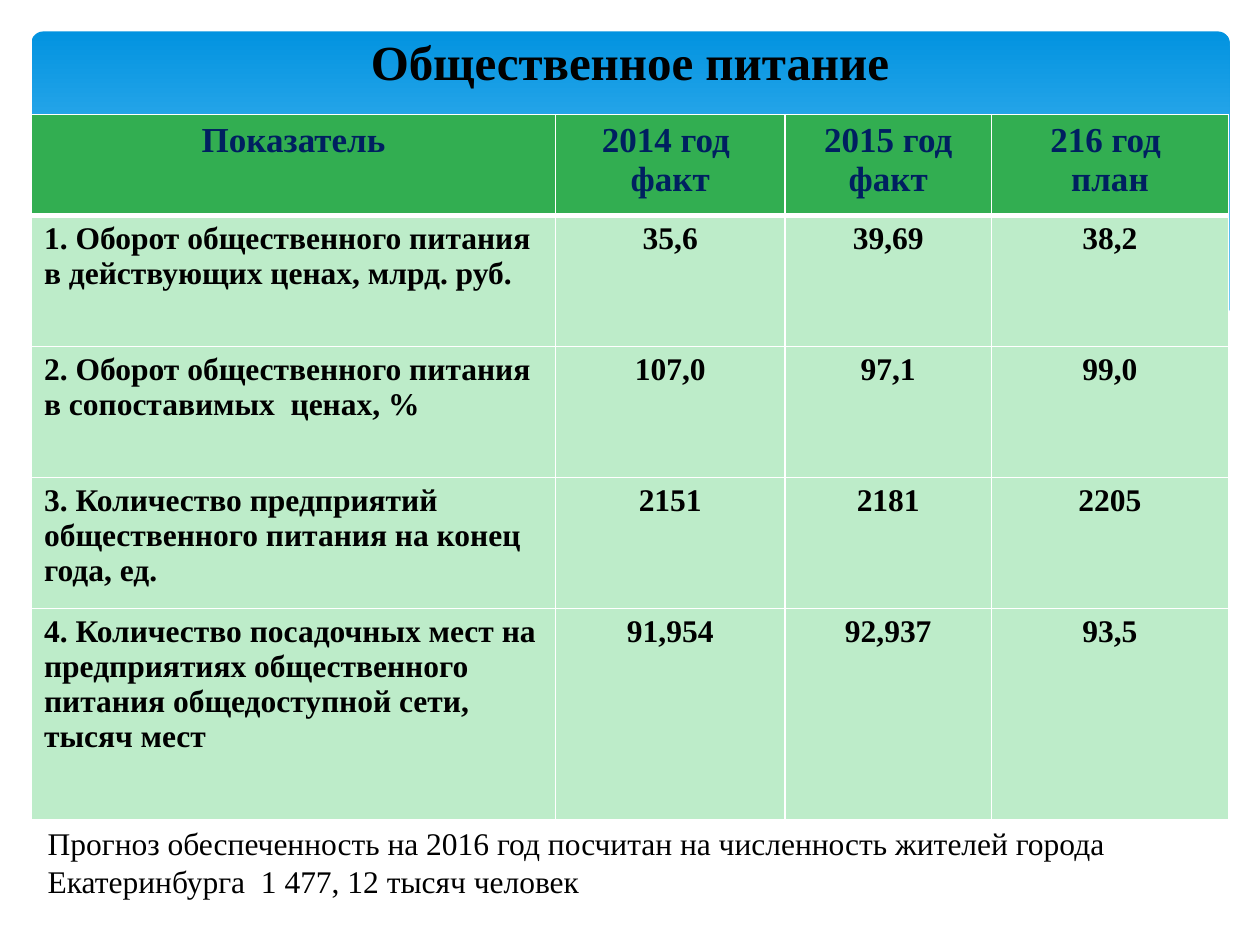
from typing import NamedTuple

from lxml import etree
from pptx import Presentation
from pptx.dml.color import RGBColor
from pptx.enum import shapes, text
from pptx.oxml import ns
from pptx.util import Inches, Pt

FONT = "Times New Roman"
ALIGN = text.PP_ALIGN


class Row(NamedTuple):
    height: float
    label: str
    values: tuple[str, str, str]


ROWS = [
    Row(0.8, "Показатель", ("2014 год \nфакт", "2015 год\nфакт", "216 год \nплан")),
    Row(1.04, "1. Оборот общественного питания  в действующих ценах, млрд. руб.",
        ("35,6", "39,69", "38,2")),
    Row(1.04, "2. Оборот общественного питания в сопоставимых  ценах, %",
        ("107,0", "97,1", "99,0")),
    Row(1.04, "3. Количество предприятий общественного питания на конец года, ед.",
        ("2151", "2181", "2205")),
    Row(1.68, "4. Количество посадочных мест на предприятиях общественного питания "
        "общедоступной сети, тысяч мест", ("91,954", "92,937", "93,5")),
]
WIDTHS = [4.16, 1.82, 1.64, 1.88]

# Lower edge of the header band, from right to left
WAVE = [(9.77, 2.46), (9.4, 2.59), (8.99, 2.69), (8.5, 2.75), (8.09, 2.77),
        (7.61, 2.75), (7.08, 2.7), (6.48, 2.62), (5.79, 2.5), (5.03, 2.33),
        (4.47, 2.2), (3.91, 2.07), (3.4, 1.97), (2.92, 1.9), (2.5, 1.86),
        (2.11, 1.84), (1.61, 1.84), (1.19, 1.87), (0.85, 1.93), (0.52, 2.01),
        (0.23, 2.13), (0.23, 3.29), (9.77, 3.29)]


def color(code: str) -> RGBColor:
    return RGBColor.from_string(code)


def write(frame, words: str, size=18, ink="000000", bold=False, align=ALIGN.LEFT) -> None:
    """Fill a text frame, one paragraph for each line."""
    frame.word_wrap = True
    for i, line in enumerate(words.split("\n")):
        par = frame.paragraphs[0] if i == 0 else frame.add_paragraph()
        par.alignment = align
        run = par.add_run()
        run.text = line
        run.font.name = FONT
        run.font.size = Pt(size)
        run.font.bold = bold
        run.font.color.rgb = color(ink)


def add_text(slide, box: tuple, words: str, anchor=text.MSO_ANCHOR.TOP, **style) -> None:
    frame = slide.shapes.add_textbox(*map(Inches, box)).text_frame
    frame.vertical_anchor = anchor
    write(frame, words, **style)


def add_edges(cell, base: float) -> None:
    """Give a cell white borders; base is the width of the lower one."""
    props = cell._tc.get_or_add_tcPr()
    for side, width in zip("LRTB", (1, 1, 1, base)):
        line = etree.SubElement(props, ns.qn(f"a:ln{side}"), w=str(Pt(width)))
        fill = etree.SubElement(line, ns.qn("a:solidFill"))
        etree.SubElement(fill, ns.qn("a:srgbClr"), val="FFFFFF")


def add_band(slide) -> None:
    band = slide.shapes.add_shape(
        shapes.MSO_SHAPE.ROUNDED_RECTANGLE, *map(Inches, (0.25, 0.25, 9.51, 2.7)))
    band.adjustments[0] = 0.034
    band.shadow.inherit = False
    band.line.fill.background()
    band.fill.gradient()
    band.fill.gradient_angle = 270
    for stop, code, place in zip(band.fill.gradient_stops, ("0293E0", "83D3FE"), (0, 0.9)):
        stop.color.rgb = color(code)
        stop.position = place


def add_wave(slide) -> None:
    """Cut the band off along a white wave."""
    start, *rest = [(Inches(x), Inches(y)) for x, y in WAVE]
    pen = slide.shapes.build_freeform(*start)
    pen.add_line_segments(rest, close=True)
    wave = pen.convert_to_shape()
    wave.shadow.inherit = False
    wave.line.fill.background()
    wave.fill.solid()
    wave.fill.fore_color.rgb = color("FFFFFF")


def add_grid(slide) -> None:
    table = slide.shapes.add_table(
        len(ROWS), len(WIDTHS), *map(Inches, (0.25, 0.91, 9.5, 5.6))).table
    for col, width in zip(table.columns, WIDTHS):
        col.width = Inches(width)
    for r, row in enumerate(ROWS):
        head = r == 0
        table.rows[r].height = Inches(row.height)
        for c, words in enumerate((row.label, *row.values)):
            cell = table.cell(r, c)
            add_edges(cell, 3 if head else 1)
            cell.fill.solid()
            cell.fill.fore_color.rgb = color("32AE51" if head else "BDECC9")
            write(cell.text_frame, words, bold=True,
                  size=20 if head else 18, ink="002060" if head else "000000",
                  align=ALIGN.CENTER if head or c else ALIGN.LEFT)


def main() -> None:
    deck = Presentation()
    deck.slide_width, deck.slide_height = Inches(10), Inches(7.5)
    slide = deck.slides.add_slide(deck.slide_layouts[6])

    # Header band and table
    add_band(slide)
    add_wave(slide)
    add_grid(slide)

    # Title and footnote
    add_text(slide, (0.5, 0.13, 9, 0.71), "Общественное питание", size=28, bold=True,
             align=ALIGN.CENTER, anchor=text.MSO_ANCHOR.MIDDLE)
    add_text(slide, (0.28, 6.49, 9.29, 1.01),
             "Прогноз обеспеченность на 2016 год посчитан на численность жителей "
             "города Екатеринбурга  1 477, 12 тысяч человек")

    deck.save("out.pptx")


if __name__ == "__main__":
    main()
